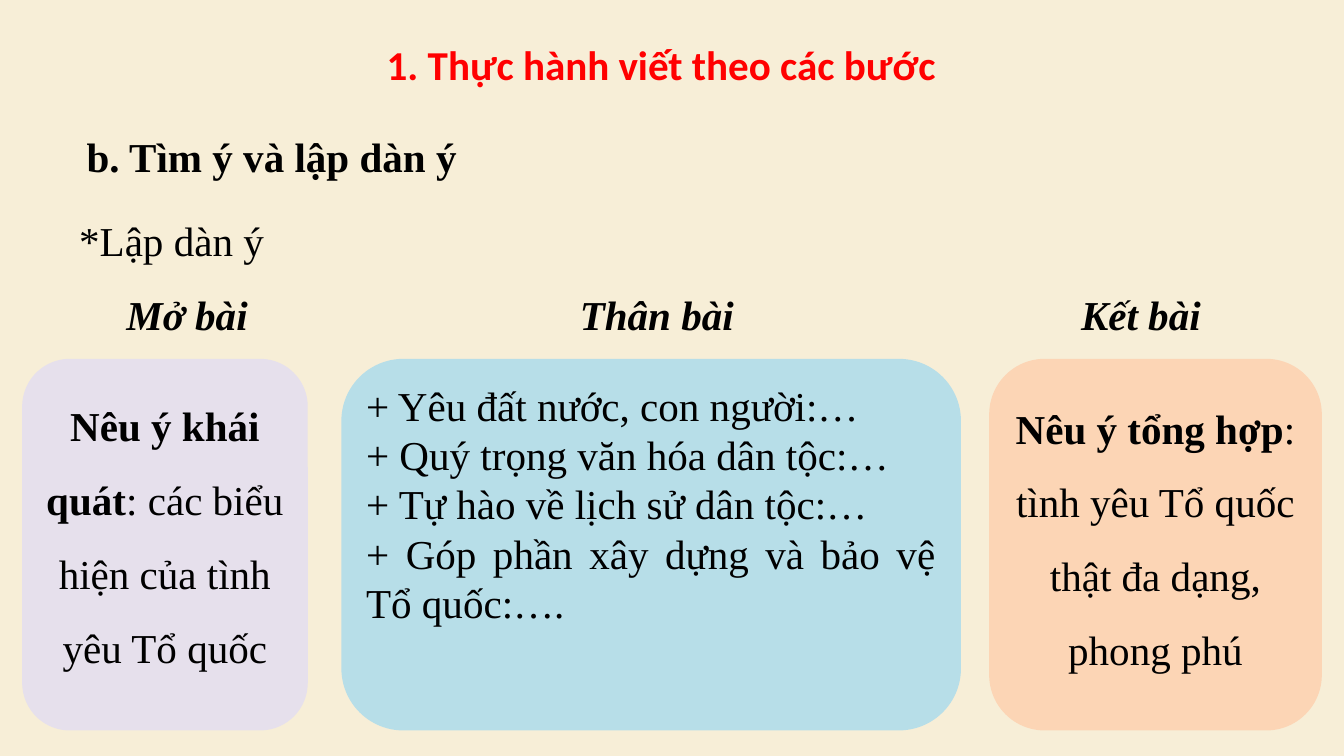
"""Build the slide on outlining an essay: opening, body and conclusion."""
from pptx import Presentation
from pptx import util as u
from pptx.dml.color import RGBColor
from pptx.enum import shapes, text

COLORS = {"background": "F7EED7", "title": "FF0000", "text": "000000",
          "opening": "E6E0EC", "body": "B7DEE8", "conclusion": "FCD5B5"}
CENTER, JUSTIFY, LEFT = text.PP_ALIGN.CENTER, text.PP_ALIGN.JUSTIFY, text.PP_ALIGN.LEFT
SERIF = {"name": "Times New Roman", "size": u.Pt(44), "bold": False, "italic": False}
BOLD = {**SERIF, "bold": True}
HEADING = {**BOLD, "italic": True}
TITLE = {**BOLD, "name": "Calibri"}

LABELS = [
    ((1.42, 0.38, 16.85, 1.25), "1. Thực hành viết theo các bước", TITLE, "title", CENTER, 0.2),
    ((1.08, 3.15, 18.08, 0.84), "*Lập dàn ý", SERIF, "text", JUSTIFY, 0.05),
    ((1.19, 1.9, 18.08, 0.84), "b. Tìm ý và lập dàn ý", BOLD, "text", LEFT, 0.05),
]
HEADING_TOP, HEADING_HEIGHT = 3.88, 1.58
PANEL_TOP, PANEL_HEIGHT = 5.34, 5.53
SECTIONS = [
    {"heading": "Mở bài", "heading_span": (0.33, 4.91), "panel_span": (0.33, 4.25),
     "color": "opening", "align": CENTER, "spacing": 1.5,
     "paragraphs": [[("Nêu ý khái quát", BOLD),
                     (": các biểu hiện của tình yêu Tổ quốc", SERIF)]]},
    {"heading": "Thân bài", "heading_span": (5.88, 7.79), "panel_span": (5.08, 9.22),
     "color": "body", "align": JUSTIFY, "spacing": 1.0,
     "paragraphs": [[("+ Yêu đất nước, con người:…", SERIF)],
                    [("+ Quý trọng văn hóa dân tộc:…", SERIF)],
                    [("+ Tự hào về lịch sử dân tộc:…", SERIF)],
                    [("+ Góp phần xây dựng và bảo vệ Tổ quốc:….", SERIF)]]},
    {"heading": "Kết bài", "heading_span": (14.3, 5.36), "panel_span": (14.72, 4.95),
     "color": "conclusion", "align": CENTER, "spacing": 1.5,
     "paragraphs": [[("Nêu ý tổng hợp", BOLD),
                     (": tình yêu Tổ quốc thật đa dạng, phong phú", SERIF)]]},
]


def write(shape, paragraphs, align, color="text", spacing=1.0, anchor=text.MSO_ANCHOR.TOP):
    frame = shape.text_frame
    frame.word_wrap = True
    frame.vertical_anchor = anchor
    for index, runs in enumerate(paragraphs):
        paragraph = frame.add_paragraph() if index else frame.paragraphs[0]
        paragraph.alignment = align
        paragraph.line_spacing = spacing
        for words, style in runs:
            run = paragraph.add_run()
            run.text = words
            for attribute, value in style.items():
                setattr(run.font, attribute, value)
            run.font.color.rgb = RGBColor.from_string(COLORS[color])


def add_label(slide, box, words, style, color, align, inset):
    shape = slide.shapes.add_textbox(*map(u.Inches, box))
    frame = shape.text_frame
    frame.margin_top = frame.margin_bottom = u.Inches(inset)
    frame.margin_left = frame.margin_right = u.Inches(max(inset, 0.1))
    write(shape, [[(words, style)]], align, color)


def add_rounded(slide, span, top, height, fill=None):
    left, width = span
    shape = slide.shapes.add_shape(shapes.MSO_SHAPE.ROUNDED_RECTANGLE,
                                   *map(u.Inches, (left, top, width, height)))
    shape.shadow.inherit = False
    shape.line.fill.background()
    if fill:
        shape.fill.solid()
        shape.fill.fore_color.rgb = RGBColor.from_string(COLORS[fill])
    else:
        shape.fill.background()
    return shape


def main():
    presentation = Presentation()
    presentation.slide_width, presentation.slide_height = u.Inches(20), u.Inches(11.25)
    slide = presentation.slides.add_slide(presentation.slide_layouts[6])
    slide.background.fill.solid()
    slide.background.fill.fore_color.rgb = RGBColor.from_string(COLORS["background"])
    for label in LABELS:
        add_label(slide, *label)
    for section in SECTIONS:
        heading = add_rounded(slide, section["heading_span"], HEADING_TOP, HEADING_HEIGHT)
        write(heading, [[(section["heading"], HEADING)]], CENTER, anchor=text.MSO_ANCHOR.MIDDLE)
    for section in SECTIONS:
        panel = add_rounded(slide, section["panel_span"], PANEL_TOP, PANEL_HEIGHT, section["color"])
        write(panel, section["paragraphs"], section["align"], spacing=section["spacing"])
    presentation.save("out.pptx")


if __name__ == "__main__":
    main()
